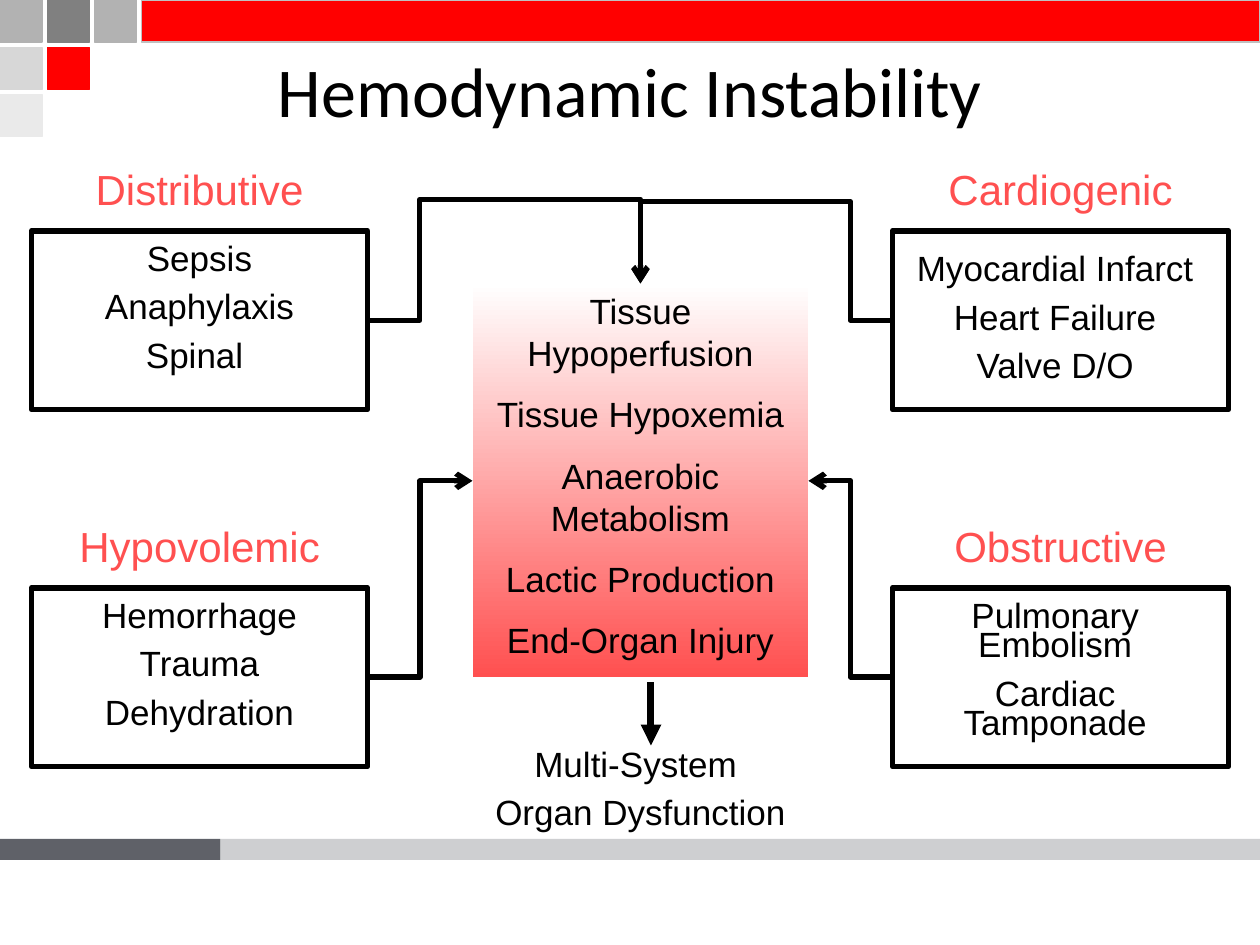
import pptx
import pptx.dml.color
import pptx.enum.shapes
import pptx.enum.text
import pptx.oxml
import pptx.oxml.ns
import pptx.util

RGB = pptx.dml.color.RGBColor
SHAPES = pptx.enum.shapes.MSO_SHAPE
CONNECTORS = pptx.enum.shapes.MSO_CONNECTOR
ANCHORS = pptx.enum.text.MSO_ANCHOR

BLACK = RGB(0x00, 0x00, 0x00)
WHITE = RGB(0xFF, 0xFF, 0xFF)
RED = RGB(0xFF, 0x00, 0x00)
CORAL = RGB(0xFF, 0x50, 0x50)
SLATE = RGB(0x5F, 0x61, 0x68)
DARK_GREY = RGB(0x80, 0x80, 0x80)
MID_GREY = RGB(0xB2, 0xB2, 0xB2)
BAR_EDGE = RGB(0xC0, 0xC0, 0xC0)
LIGHT_GREY = RGB(0xD7, 0xD7, 0xD7)
PALE_GREY = RGB(0xEA, 0xEA, 0xEA)

COLUMNS, ROWS = 120, 90


def add_xml(parent, tag, **attributes):
    element = pptx.oxml.parse_xml(f"<a:{tag} {pptx.oxml.ns.nsdecls('a')}/>")
    for name, value in attributes.items():
        element.set(name, str(value))
    parent.append(element)
    return element


class Diagram:
    """Draws on one slide; lengths are columns and rows of a 120 by 90 grid."""

    def __init__(self, presentation):
        self.slide = presentation.slides.add_slide(presentation.slide_layouts[6])
        self.shapes = self.slide.shapes
        self.column = presentation.slide_width / COLUMNS
        self.row = presentation.slide_height / ROWS

    def place(self, x, y):
        return round(x * self.column), round(y * self.row)

    def box(self, x, y, width, height, fill=None, line=None, weight=0.75, alpha=None):
        box = self.shapes.add_shape(
            SHAPES.RECTANGLE, *self.place(x, y), *self.place(width, height))
        box.shadow.inherit = False
        if fill is None:
            box.fill.background()
        else:
            box.fill.solid()
            box.fill.fore_color.rgb = fill
        if alpha is not None:
            color = box._element.spPr.find(".//" + pptx.oxml.ns.qn("a:srgbClr"))
            add_xml(color, "alpha", val=alpha * 1000)
        if line is None:
            box.line.fill.background()
        else:
            box.line.color.rgb = line
            box.line.width = pptx.util.Pt(weight)
        return box

    def set_text(self, shape, lines, size=20, color=BLACK, font="Arial",
                 spacing=None, anchor=ANCHORS.TOP):
        frame = shape.text_frame
        frame.word_wrap = True
        frame.vertical_anchor = anchor
        for index, line in enumerate(lines):
            paragraph = frame.add_paragraph() if index else frame.paragraphs[0]
            paragraph.text = line
            paragraph.alignment = pptx.enum.text.PP_ALIGN.CENTER
            if spacing:
                paragraph.line_spacing = spacing
            if index:
                paragraph.space_before = pptx.util.Pt(11)
            paragraph.font.size = pptx.util.Pt(size)
            paragraph.font.name = font
            paragraph.font.color.rgb = color

    def text(self, x, y, width, height, lines, **style):
        box = self.shapes.add_textbox(*self.place(x, y), *self.place(width, height))
        self.set_text(box, lines, **style)

    def gradient_box(self, x, y, width, height, top, bottom, lines):
        box = self.box(x, y, width, height)
        box.fill.gradient()
        box.fill.gradient_angle = 270
        for stop, color in zip(box.fill.gradient_stops, (top, bottom)):
            stop.color.rgb = color
        self.set_text(box, lines)

    def arrow(self, start, end, weight=3, head="arrow", kind=CONNECTORS.STRAIGHT):
        arrow = self.shapes.add_connector(kind, *self.place(*start), *self.place(*end))
        arrow.line.color.rgb = BLACK
        arrow.line.width = pptx.util.Pt(weight)
        outline = arrow._element.spPr.find(pptx.oxml.ns.qn("a:ln"))
        add_xml(outline, "tailEnd", type=head)
        add_xml(arrow._element.spPr, "effectLst")
        return arrow

    def elbow(self, start, end, lane, crest=None):
        """Bend at column lane; with a crest row, pass over it and come down."""
        arrow = self.arrow(start, end, kind=CONNECTORS.ELBOW)
        bends = [(lane - start[0]) / (end[0] - start[0])]
        geometry = arrow._element.spPr.find(pptx.oxml.ns.qn("a:prstGeom"))
        if crest is not None:
            geometry.set("prst", "bentConnector4")
            bends.append((crest - start[1]) / (end[1] - start[1]))
        guides = geometry.find(pptx.oxml.ns.qn("a:avLst"))
        for number, bend in enumerate(bends, 1):
            add_xml(guides, "gd", name=f"adj{number}", fmla=f"val {round(bend * 100000)}")

    def shock_type(self, x, y, name, causes, body):
        self.box(x, y + 7, 32, 17, line=BLACK, weight=3.25)
        self.text(x, y, 32, 6, [name], size=24, color=CORAL)
        self.text(*body, causes, spacing=0.7)


def draw_frame(diagram):
    mosaic = [[MID_GREY, DARK_GREY, MID_GREY], [LIGHT_GREY, RED], [PALE_GREY]]
    for row, colors in enumerate(mosaic):
        for column, color in enumerate(colors):
            diagram.box(column * 4.5, row * 4.5, 4, 4, color, color)
    diagram.box(13.5, 0, 106.5, 4, RED, BAR_EDGE)
    diagram.box(0, 79.9, 21, 2, SLATE)
    diagram.box(21, 79.9, 99, 2, SLATE, alpha=30)


def main():
    presentation = pptx.Presentation()
    presentation.slide_width = pptx.util.Inches(10)
    presentation.slide_height = pptx.util.Inches(7.5)
    diagram = Diagram(presentation)
    draw_frame(diagram)
    diagram.text(6, 4, 108, 9, ["Hemodynamic Instability"], size=40,
                 font="Calibri", anchor=ANCHORS.MIDDLE)

    diagram.gradient_box(45, 27, 32, 37.5, WHITE, CORAL, [
        "Tissue Hypoperfusion", "Tissue Hypoxemia", "Anaerobic Metabolism",
        "Lactic Production", "End-Organ Injury"])

    left, right, upper, lower = 3, 85, 15, 49
    shock_types = [
        (left, upper, "Distributive", ["Sepsis", "Anaphylaxis", "Spinal "],
         (5, 23, 28, 13.7)),
        (left, lower, "Hypovolemic", ["Hemorrhage", "Trauma", "Dehydration"],
         (4, 57, 30, 13.7)),
        (right, upper, "Cardiogenic",
         ["Myocardial Infarct", "Heart Failure", "Valve D/O"], (86, 24, 29, 13.7)),
        (right, lower, "Obstructive", ["Pulmonary Embolism", "Cardiac Tamponade"],
         (86, 57, 29, 14.5)),
    ]
    for shock_type in shock_types:
        diagram.shock_type(*shock_type)

    diagram.arrow((62, 65), (62, 71), weight=4, head="triangle")
    diagram.text(31, 71.2, 60, 8.9, ["Multi-System ", "Organ Dysfunction"], spacing=0.7)

    for edge, lane, side, crest in [(35, 40, 45, 19), (85, 81, 77, 19.2)]:
        diagram.elbow((edge, 64.5), (side, 45.8), lane)
        diagram.elbow((edge, 30.5), (61, 27), lane, crest)

    presentation.save("out.pptx")


if __name__ == "__main__":
    main()
